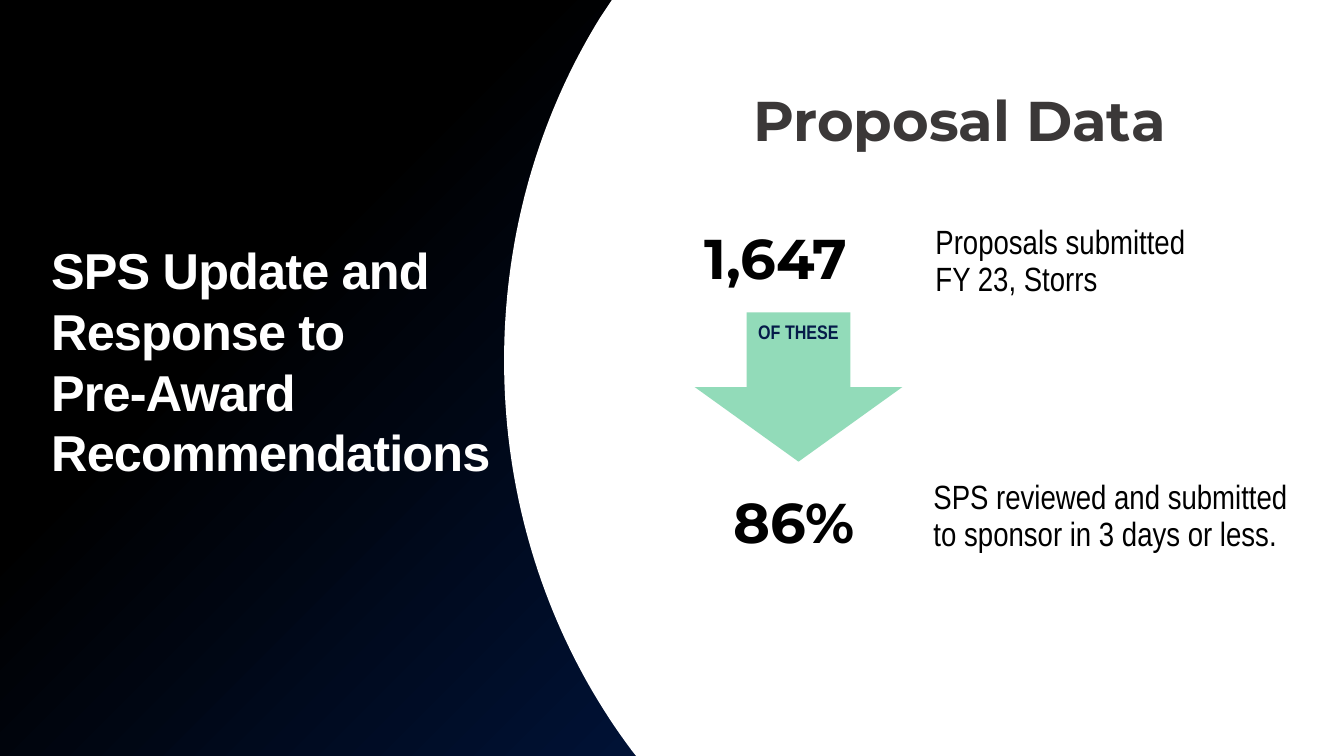
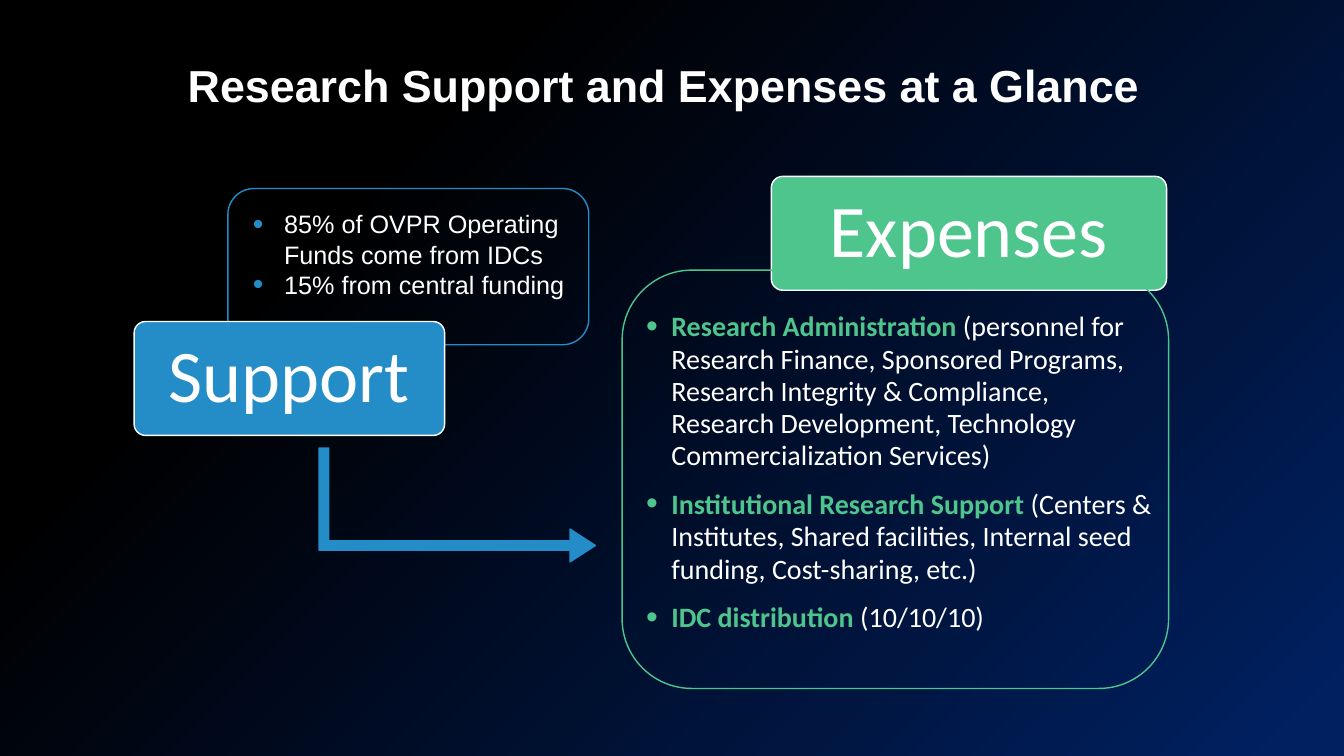
from lxml import etree
from pptx import Presentation
from pptx.dml.color import RGBColor
from pptx.enum.shapes import MSO_SHAPE as Shape
from pptx.enum.text import MSO_ANCHOR as Anchor, MSO_AUTO_SIZE as AutoSize, PP_ALIGN as Align
from pptx.oxml.ns import qn
from pptx.util import Inches, Pt

WHITE, BLACK, NAVY, INK = "FFFFFF", "000000", "002060", "051B49"
GREEN, BLUE, CHARCOAL = "4EC58D", "248CC6", "3B3838"

PANEL_TEXT = "SPS Update and Response to \vPre-Award Recommendations"
FIGURES = [
    ("1,647", (6.89, 2.17, 2.06, 0.77)),
    ("86%", (7.18, 4.79, 1.58, 0.77)),
]
FIGURE_NOTES = [
    ("Proposals submitted \vFY 23, Storrs", (9.18, 2.19, 3.9, 0.91)),
    ("SPS reviewed and submitted to sponsor in 3 days or less.", (9.16, 4.72, 3.92, 1.28)),
]
CURVE_START = (6.27, 7.45)
CURVES = [
    ((5.48, 6.4), (5, 5.05), (5, 3.58)),
    ((5, 2.32), (5.35, 1.15), (5.95, 0.18)),
]
CURVE_STEPS = 40

SUPPORT = ["85% of OVPR Operating Funds come from IDCs", "15% from central funding"]
EXPENSES = [
    ("Research Administration ",
     "(personnel for Research Finance, Sponsored Programs, Research Integrity & Compliance, "
     "Research Development, Technology Commercialization Services)"),
    ("Institutional Research Support ",
     "(Centers & Institutes, Shared facilities, Internal seed funding, Cost-sharing, etc.)"),
    ("IDC distribution ", "(10/10/10)"),
]
HEADERS = [
    ("Support", BLUE, (1.33, 3.19, 3.08, 1.13)),
    ("Expenses", GREEN, (7.65, 1.75, 3.92, 1.13)),
]


def rgb(value):
    return RGBColor.from_string(value)


def inches(box):
    return [Inches(length) for length in box]


def add_bullet(paragraph, indent, color):
    props = paragraph._p.get_or_add_pPr()
    props.set("marL", str(Inches(indent)))
    props.set("indent", str(-Inches(indent)))
    bullet_color = etree.SubElement(props, qn("a:buClr"))
    etree.SubElement(bullet_color, qn("a:srgbClr"), val=color)
    etree.SubElement(props, qn("a:buSzPct"), val="120000")
    etree.SubElement(props, qn("a:buFont"), typeface="Arial")
    etree.SubElement(props, qn("a:buChar"), char="•")


def write(frame, text, size=20, font="Arial", color=WHITE, bold=False, align=Align.LEFT,
          anchor=Anchor.TOP, line=None, after=None, tracking=None, indent=None,
          bullet=None, lead=None, inset=(0.1, 0.05)):
    frame.word_wrap = True
    frame.auto_size = AutoSize.NONE
    frame.vertical_anchor = anchor
    frame.margin_left = frame.margin_right = Inches(inset[0])
    frame.margin_top = frame.margin_bottom = Inches(inset[1])
    for index, item in enumerate([text] if isinstance(text, str) else text):
        paragraph = frame.add_paragraph() if index else frame.paragraphs[0]
        if bullet:
            add_bullet(paragraph, indent, bullet)
        paragraph.alignment = align
        if line:
            paragraph.line_spacing = line
        if after:
            paragraph.space_after = Pt(after)
        parts = [(item, color, bold)]
        if lead:
            parts = [(item[0], lead, True), (item[1], color, bold)]
        for words, tint, heavy in parts:
            for row, piece in enumerate(words.split("\v")):
                if row:
                    paragraph.add_line_break()
                run = paragraph.add_run()
                run.text = piece
                run.font.size, run.font.name, run.font.bold = Pt(size), font, heavy
                run.font.color.rgb = rgb(tint)
                if tracking:
                    run.font._element.set("spc", str(int(tracking * 100)))


def add_text(slide, text, box, **fmt):
    write(slide.shapes.add_textbox(*inches(box)).text_frame, text, **fmt)


def paint(shape, fill=None, line=None):
    shape.shadow.inherit = False
    if fill:
        shape.fill.solid()
        shape.fill.fore_color.rgb = rgb(fill)
    else:
        shape.fill.background()
    if line:
        shape.line.color.rgb = rgb(line)
        shape.line.width = Pt(1)
    else:
        shape.line.fill.background()


def add_block(slide, kind, box, fill=None, line=None, adjust=()):
    shape = slide.shapes.add_shape(kind, *inches(box))
    for index, value in enumerate(adjust):
        shape.adjustments[index] = value
    paint(shape, fill, line)
    return shape


def curve_points():
    points, start = [], CURVE_START
    for first, second, end in CURVES:
        for step in range(1, CURVE_STEPS + 1):
            t = step / CURVE_STEPS
            weights = ((1 - t) ** 3, 3 * t * (1 - t) ** 2, 3 * t * t * (1 - t), t ** 3)
            corners = (start, first, second, end)
            points.append(tuple(sum(w * c[axis] for w, c in zip(weights, corners))
                                for axis in (0, 1)))
        start = end
    return points


def set_backdrop(prs):
    fill = prs.slide_master.background.fill
    fill.gradient()
    fill.gradient_angle = 315
    for stop, position, color in zip(fill.gradient_stops, (0.26, 0.97), (BLACK, NAVY)):
        stop.position = position
        stop.color.rgb = rgb(color)


def add_slide(prs, title, box, **fmt):
    slide = prs.slides.add_slide(prs.slide_layouts[5])
    heading = slide.shapes.title
    heading.left, heading.top, heading.width, heading.height = inches(box)
    write(heading.text_frame, title, bold=True, line=0.9, **fmt)
    return slide


def build_proposals(prs):
    slide = add_slide(prs, "Proposal Data", (7.37, 0.87, 4.72, 1.01),
                      size=40, font="Montserrat", color=CHARCOAL)
    outline = [(6.07, 0), (13.33, 0), (13.33, 7.5), (6.31, 7.5), CURVE_START] + curve_points()
    corners = [tuple(inches(point)) for point in outline]
    builder = slide.shapes.build_freeform(*corners[0])
    builder.add_line_segments(corners[1:], close=True)
    page = builder.convert_to_shape()
    paint(page, fill=WHITE)
    slide.shapes._spTree.insert(2, page._element)

    add_text(slide, PANEL_TEXT, (0.41, 2.32, 4.56, 2.51), size=36, bold=True,
             line=Pt(43.4), tracking=-0.6)
    for figure, box in FIGURES:
        add_text(slide, figure, box, size=40, font="Montserrat", color=BLACK, bold=True)
    for note, box in FIGURE_NOTES:
        add_text(slide, note, box, size=24, font="Arial Narrow", color=BLACK, line=0.9)

    arrow = add_block(slide, Shape.DOWN_ARROW, (6.89, 3.1, 2.06, 1.48), fill=GREEN)
    tint = arrow._element.spPr.find(qn("a:solidFill")).find(qn("a:srgbClr"))
    etree.SubElement(tint, qn("a:alpha"), val="61000")
    add_text(slide, "OF THESE", (7.42, 3.12, 1, 0.34), size=14, font="Arial Narrow",
             color=INK, bold=True, align=Align.CENTER)


def build_glance(prs):
    slide = add_slide(prs, "Research Support and Expenses at a Glance",
                      (1.25, 0.58, 10.67, 0.67), size=32, align=Align.CENTER)
    add_block(slide, Shape.ROUNDED_RECTANGLE, (2.26, 1.87, 3.58, 1.55), line=BLUE)
    for label, color, box in HEADERS:
        header = add_block(slide, Shape.ROUNDED_RECTANGLE, box, color, WHITE, (0.1,))
        write(header.text_frame, label, size=53, font="Calibri", align=Align.CENTER,
              anchor=Anchor.MIDDLE, line=0.9, inset=(0.11, 0.07))
    add_block(slide, Shape.ROUNDED_RECTANGLE, (6.17, 2.68, 5.42, 4.15), line=GREEN)
    add_text(slide, EXPENSES, (6.31, 3.03, 5.25, 3.34), size=20, font="Calibri",
             line=Pt(23), after=12, indent=0.25, bullet=GREEN, lead=GREEN)
    add_text(slide, SUPPORT, (2.41, 2.02, 3.43, 1.01), size=18, indent=0.31, bullet=BLUE)
    flow = add_block(slide, Shape.BENT_UP_ARROW, (3.97, 3.64, 1.13, 2.74), BLUE, BLUE,
                     (0.083, 0.144, 0.222))
    flow.rotation = 90


def main():
    prs = Presentation()
    prs.slide_width, prs.slide_height = Inches(13.33), Inches(7.5)
    set_backdrop(prs)
    build_proposals(prs)
    build_glance(prs)
    prs.save("out.pptx")


if __name__ == "__main__":
    main()
